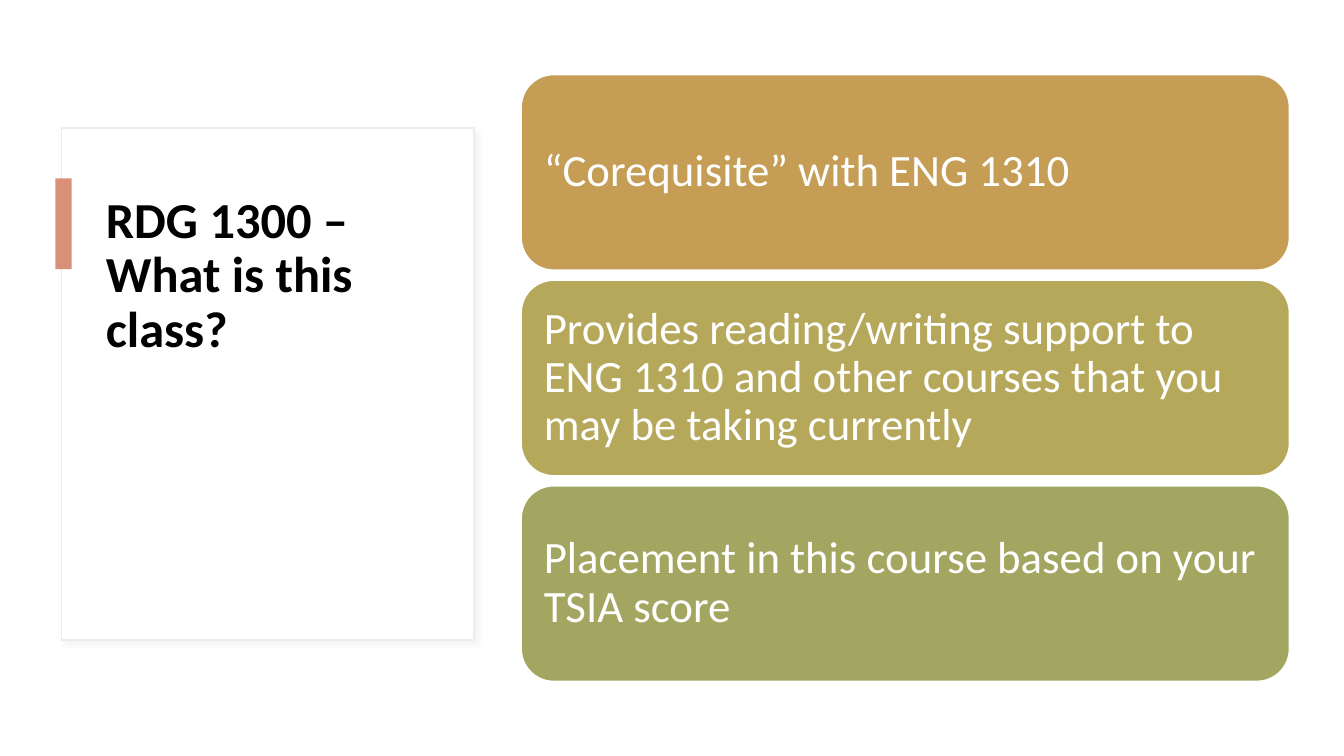
import lxml.etree
import pptx
import pptx.dml.color
import pptx.enum.shapes
import pptx.enum.text
import pptx.oxml
import pptx.oxml.ns
import pptx.util

RGBColor = pptx.dml.color.RGBColor
MSO_SHAPE = pptx.enum.shapes.MSO_SHAPE
MSO_ANCHOR = pptx.enum.text.MSO_ANCHOR
PP_ALIGN = pptx.enum.text.PP_ALIGN

WHITE = RGBColor(0xFF, 0xFF, 0xFF)
BLACK = RGBColor(0x00, 0x00, 0x00)
CARD_EDGE = RGBColor(0xF0, 0xEC, 0xE5)
CORAL = RGBColor(0xDA, 0x8F, 0x7A)
GOLD = RGBColor(0xC5, 0x9D, 0x55)
OLIVE = RGBColor(0xB6, 0xA8, 0x5A)
SAGE = RGBColor(0xA2, 0xA6, 0x61)
SHADOW_GREY = RGBColor(0xD9, 0xD9, 0xD9)

FACTS = [
    ("“Corequisite” with ENG 1310", GOLD),
    ("Provides reading/writing support to ENG 1310 and other courses "
     "that you may be taking currently", OLIVE),
    ("Placement in this course based on your TSIA score", SAGE),
]
FACT_TOP, FACT_HEIGHT, FACT_PITCH = 9.87, 25.87, 27.2


class CourseSlide:
    """Places elements by (left, top, width, height) in percent of the slide."""

    font_name = "Calibri"
    line_spacing = 0.9

    def __init__(self, deck):
        self.deck = deck
        self.slide = deck.slides.add_slide(deck.slide_layouts[5])

    def place(self, area):
        sides = (self.deck.slide_width, self.deck.slide_height) * 2
        return [round(side * share / 100) for side, share in zip(sides, area)]

    def set_text(self, frame, text, frame_format, font_format, color, space_after=0):
        frame.word_wrap = True
        for name, value in frame_format.items():
            setattr(frame, name, value)
        frame.text = text
        paragraph = frame.paragraphs[0]
        paragraph_format = {
            "alignment": PP_ALIGN.LEFT,
            "line_spacing": self.line_spacing,
            "space_before": pptx.util.Pt(0),
            "space_after": pptx.util.Pt(space_after),
        }
        for name, value in paragraph_format.items():
            setattr(paragraph, name, value)
        font = paragraph.runs[0].font
        for name, value in {"name": self.font_name, **font_format}.items():
            setattr(font, name, value)
        font.color.rgb = color

    def block(self, area, fill, edge=None, preset=MSO_SHAPE.RECTANGLE):
        block = self.slide.shapes.add_shape(preset, *self.place(area))
        block.shadow.inherit = False
        block.fill.solid()
        block.fill.fore_color.rgb = fill
        if edge is None:
            block.line.fill.background()
        else:
            block.line.color.rgb = edge
            block.line.width = pptx.util.Pt(1)
        return block

    def card(self, area):
        card = self.block(area, WHITE, CARD_EDGE)
        effects = card._element.spPr.find(pptx.oxml.ns.qn("a:effectLst"))
        shadow = lxml.etree.SubElement(
            effects, pptx.oxml.ns.qn("a:outerShdw"),
            blurRad=str(pptx.util.Pt(4)), dist=str(pptx.util.Pt(3)),
            dir=str(45 * 60000), algn="tl", rotWithShape="0")
        color = lxml.etree.SubElement(
            shadow, pptx.oxml.ns.qn("a:srgbClr"), val=str(SHADOW_GREY))
        lxml.etree.SubElement(color, pptx.oxml.ns.qn("a:alpha"), val="30000")

    def title(self, area, text):
        """Fill the title and bring it in front of the blocks drawn so far."""
        title = self.slide.shapes.title
        title.left, title.top, title.width, title.height = self.place(area)
        self.set_text(
            title.text_frame, text,
            {"vertical_anchor": MSO_ANCHOR.TOP,
             "auto_size": pptx.enum.text.MSO_AUTO_SIZE.NONE},
            {"size": pptx.util.Pt(36), "bold": True}, BLACK)
        self.slide.shapes._spTree.append(title._element)

    def fact(self, area, text, fill):
        panel = self.block(area, fill, WHITE, MSO_SHAPE.ROUNDED_RECTANGLE)
        margins = ("margin_left", "margin_top", "margin_right", "margin_bottom")
        frame_format = dict.fromkeys(margins, pptx.util.Inches(0.13))
        frame_format["vertical_anchor"] = MSO_ANCHOR.MIDDLE
        self.set_text(panel.text_frame, text, frame_format,
                      {"size": pptx.util.Pt(32)}, WHITE, space_after=11)


def main():
    deck = pptx.Presentation()
    deck.slide_width = pptx.util.Inches(13.33)
    deck.slide_height = pptx.util.Inches(7.5)

    course = CourseSlide(deck)
    course.card((4.58, 16.93, 30.68, 67.73))
    course.title((7.13, 25.07, 25.43, 51.33), "RDG 1300 – What is this class?")
    course.block((4.13, 23.6, 1.2, 12), CORAL)
    for row, (text, fill) in enumerate(FACTS):
        top = FACT_TOP + row * FACT_PITCH
        course.fact((38.78, top, 57.16, FACT_HEIGHT), text, fill)

    deck.save("out.pptx")


if __name__ == "__main__":
    main()
